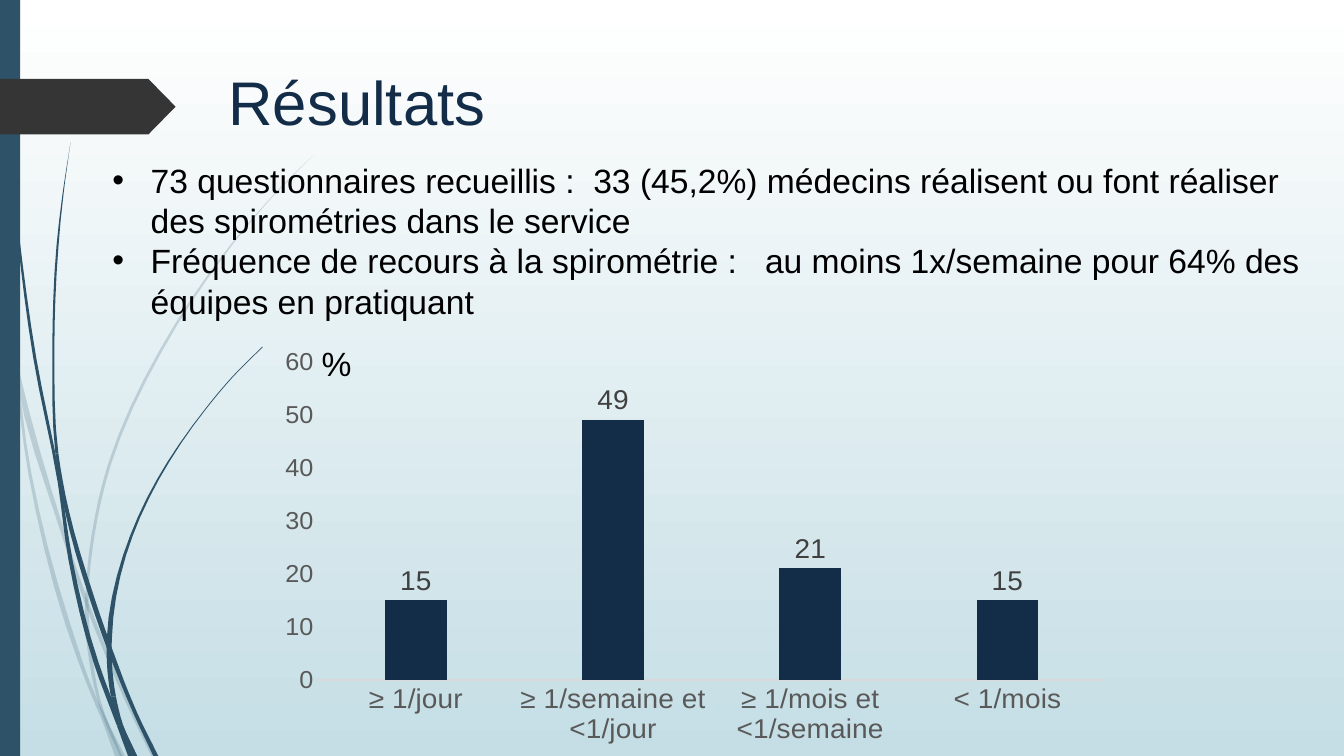
from lxml import etree
from pptx import Presentation
from pptx.chart.data import CategoryChartData
from pptx.dml.color import RGBColor
from pptx.enum.chart import XL_CHART_TYPE as ChartType
from pptx.enum.chart import XL_LABEL_POSITION as LabelPosition
from pptx.enum.chart import XL_TICK_MARK as TickMark
from pptx.enum.shapes import MSO_SHAPE as Preset
from pptx.enum.text import MSO_ANCHOR as Anchor
from pptx.enum.text import MSO_AUTO_SIZE as AutoSize
from pptx.enum.text import PP_ALIGN as Align
from pptx.oxml import parse_xml
from pptx.oxml.ns import nsdecls, qn
from pptx.util import Inches, Pt

WIDTH, HEIGHT = Inches(13.33), Inches(7.5)
COLUMNS, ROWS = 160, 90
FONT = "Arial"
NAVY, TEAL, CHARCOAL, BLACK = "132C48", "2E5369", "353535", "000000"
AXIS_GREY, LABEL_GREY, LINE_GREY = "595959", "404040", "D9D9D9"

FINDINGS = [
    "73 questionnaires recueillis :  33 (45,2%) médecins réalisent ou font réaliser "
    "des spirométries dans le service",
    "Fréquence de recours à la spirométrie :   au moins 1x/semaine pour 64% des "
    "équipes en pratiquant",
]
FREQUENCIES = {
    "≥ 1/jour": 15,
    "≥ 1/semaine et <1/jour": 49,
    "≥ 1/mois et <1/semaine": 21,
    "< 1/mois": 15,
}

# Each grass blade: its stations (height, left edge, right edge) in inches,
# and the heights of the joints between its sections.
PALE_BLADES = [
    ([(2.82, 0, 0), (2.99, 0, 0.04), (3.5, 0.11, 0.14), (4.69, 0.28, 0.31),
      (6.2, 0.65, 0.7), (6.93, 0.92, 0.96), (7.14, 1.01, 1.06), (7.5, 1.14, 1.21)],
     (3.5, 7.14)),
    ([(3.45, 0.14, 0.14), (3.76, 0.17, 0.21), (5.21, 0.58, 0.62), (5.98, 0.84, 0.88),
      (6.93, 1.23, 1.27), (7.5, 1.5, 1.55)],
     (5.98,)),
    ([(1.53, 3.12, 3.12), (1.75, 2.89, 2.9), (1.98, 2.67, 2.68), (2.45, 2.27, 2.29),
      (3.48, 1.58, 1.61), (4.61, 1.07, 1.1), (5.3, 0.91, 0.94), (5.86, 0.85, 0.88),
      (6.1, 0.84, 0.88), (6.46, 0.87, 0.91), (6.92, 0.96, 0.99), (7.11, 1.02, 1.05),
      (7.5, 1.19, 1.24)],
     (5.86, 6.1, 6.92, 7.11)),
]
DARK_BLADES = [
    ([(0, 0.03, 0.04), (1.1, 0.07, 0.08), (2.33, 0.17, 0.19), (3.55, 0.33, 0.36),
      (4.77, 0.57, 0.6), (5.56, 0.68, 0.72), (6.58, 0.93, 0.98), (7.2, 1.16, 1.22),
      (7.5, 1.27, 1.36)],
     (4.77, 7.2)),
    ([(1.41, 0.7, 0.7), (1.93, 0.62, 0.63), (2.45, 0.56, 0.58), (3.49, 0.52, 0.54),
      (4.5, 0.55, 0.58), (5.05, 0.64, 0.68), (5.91, 0.88, 0.93), (6.43, 1.06, 1.11),
      (7.07, 1.32, 1.36), (7.5, 1.52, 1.57)],
     (4.5, 5.05, 6.43)),
    ([(3.44, 2.6, 2.61), (3.74, 2.3, 2.31), (4.05, 2.04, 2.05), (4.75, 1.56, 1.58),
      (5.51, 1.22, 1.25), (6.33, 1.06, 1.11), (6.56, 1.06, 1.11), (6.91, 1.1, 1.15),
      (7.19, 1.17, 1.22), (7.5, 1.29, 1.36)],
     (6.33, 6.56, 6.91, 7.19)),
]


def rgb(hex_code):
    return RGBColor.from_string(hex_code)


def cell_box(column, row, columns, rows):
    """Turn grid cells into left, top, width and height."""
    return (int(WIDTH * column / COLUMNS), int(HEIGHT * row / ROWS),
            int(WIDTH * columns / COLUMNS), int(HEIGHT * rows / ROWS))


def style_font(font, size, color):
    font.name, font.size, font.color.rgb = FONT, Pt(size), rgb(color)


def paint(shape, color):
    shape.fill.solid()
    shape.fill.fore_color.rgb = rgb(color)
    shape.line.fill.background()
    shape.shadow.inherit = False


def paint_background(slide):
    fill = slide.background.fill
    fill.gradient()
    fill.gradient_angle = 270
    for stop, position, color in zip(fill.gradient_stops, (0, 1), ("FFFFFF", "C5DEE5")):
        stop.position, stop.color.rgb = position, rgb(color)


def smooth(heights, edge, steps=4):
    """Run a cubic curve through the edge's stations, as (x, y) points."""
    gaps = [b - a for a, b in zip(heights, heights[1:])]
    rates = [(b - a) / gap for a, b, gap in zip(edge, edge[1:], gaps)]
    inner = [(rates[i] * gaps[i + 1] + rates[i + 1] * gaps[i]) / (gaps[i] + gaps[i + 1])
             for i in range(len(gaps) - 1)]
    slopes = [rates[0], *inner, rates[-1]]
    curve = []
    for i, gap in enumerate(gaps):
        for t in (step / steps for step in range(steps)):
            ease = t * t * (3 - 2 * t)
            bend = gap * t * (1 - t) * (slopes[i] * (1 - t) - slopes[i + 1] * t)
            curve.append((edge[i] + (edge[i + 1] - edge[i]) * ease + bend,
                          heights[i] + gap * t))
    return curve + [(edge[-1], heights[-1])]


def add_blade(slide, stations, joints, opacity=100):
    heights, left, right = zip(*stations)
    sides = smooth(heights, left), smooth(heights, right)
    bounds = [heights[0], *joints, heights[-1]]
    for top, bottom in zip(bounds, bounds[1:]):
        down, up = ([(x * 1000, y * 1000) for x, y in side if top <= y <= bottom]
                    for side in sides)
        outline = down + up[::-1]
        builder = slide.shapes.build_freeform(*outline[0], scale=914.4)
        builder.add_line_segments(outline[1:], close=True)
        section = builder.convert_to_shape()
        paint(section, TEAL)
        if opacity < 100:
            color = section.element.spPr.find(f"{qn('a:solidFill')}/{qn('a:srgbClr')}")
            etree.SubElement(color, qn("a:alpha"), val=str(opacity * 1000))


def add_block(slide, preset, box, color):
    block = slide.shapes.add_shape(preset, *cell_box(*box))
    paint(block, color)
    return block


def add_title(slide, text, box):
    title = slide.shapes.title
    title.left, title.top, title.width, title.height = cell_box(*box)
    frame = title.text_frame
    frame.text = text
    frame.vertical_anchor, frame.auto_size = Anchor.TOP, AutoSize.NONE
    frame.paragraphs[0].alignment = Align.LEFT
    style_font(frame.paragraphs[0].runs[0].font, 44, NAVY)
    slide.shapes.element.append(title.element)  # in front of the blades


def add_text(slide, lines, box, bulleted=False):
    frame = slide.shapes.add_textbox(*cell_box(*box)).text_frame
    frame.word_wrap = True
    frame.text = "\n".join(lines)
    for paragraph in frame.paragraphs:
        style_font(paragraph.runs[0].font, 24, BLACK)
        if bulleted:
            add_bullet(paragraph)


def add_bullet(paragraph):
    properties = paragraph._p.get_or_add_pPr()
    hang = Inches(0.38)
    properties.set("marL", str(hang))
    properties.set("indent", str(-hang))
    etree.SubElement(properties, qn("a:buFont"), typeface=FONT)
    etree.SubElement(properties, qn("a:buChar"), char="•")


def style_axis(axis, size):
    axis.has_major_gridlines = False
    axis.major_tick_mark = axis.minor_tick_mark = TickMark.NONE
    style_font(axis.tick_labels.font, size, AXIS_GREY)


def set_plot_area(chart, *percents):
    """Fix the inner plot area: x, y, width, height in percent of the chart."""
    sizes = "".join(f'<c:{tag} val="{percent / 100}"/>'
                    for tag, percent in zip("xywh", percents))
    plot_area = chart.element.find(f".//{qn('c:plotArea')}")
    for layout in plot_area.findall(qn("c:layout")):
        plot_area.remove(layout)
    plot_area.insert(0, parse_xml(
        f'<c:layout {nsdecls("c")}><c:manualLayout><c:layoutTarget val="inner"/>'
        f'<c:xMode val="edge"/><c:yMode val="edge"/>{sizes}</c:manualLayout></c:layout>'))


def add_frequency_chart(slide, box):
    data = CategoryChartData()
    data.categories = list(FREQUENCIES)
    data.add_series("Series 1", list(FREQUENCIES.values()))
    chart = slide.shapes.add_chart(
        ChartType.COLUMN_CLUSTERED, *cell_box(*box), data).chart
    chart.has_legend = chart.has_title = False
    style_font(chart.font, 18, BLACK)
    set_plot_area(chart, 5.6, 6, 90.9, 80.6)

    style_axis(chart.category_axis, 20)
    axis_line = chart.category_axis.format.line
    axis_line.color.rgb, axis_line.width = rgb(LINE_GREY), Pt(0.75)
    percent_axis = chart.value_axis
    style_axis(percent_axis, 18)
    percent_axis.format.line.fill.background()
    percent_axis.minimum_scale, percent_axis.maximum_scale = 0, 60
    percent_axis.major_unit = 10

    plot = chart.plots[0]
    plot.vary_by_categories, plot.gap_width, plot.overlap = False, 219, -27
    bars = plot.series[0].format.fill
    bars.solid()
    bars.fore_color.rgb = rgb(NAVY)
    plot.has_data_labels = True
    plot.data_labels.show_value = True
    plot.data_labels.position = LabelPosition.OUTSIDE_END
    style_font(plot.data_labels.font, 20, LABEL_GREY)


def main():
    deck = Presentation()
    deck.slide_width, deck.slide_height = WIDTH, HEIGHT
    slide = deck.slides.add_slide(deck.slide_layouts[5])
    paint_background(slide)
    for stations, joints in PALE_BLADES:
        add_blade(slide, stations, joints, opacity=20)
    for stations, joints in DARK_BLADES:
        add_blade(slide, stations, joints)
    add_block(slide, Preset.RECTANGLE, (0, 0, 2.4, 90), TEAL)
    tag = add_block(slide, Preset.PENTAGON, (0, 9.4, 20.9, 6.6), CHARCOAL)
    tag.adjustments[0] = 0.49
    add_title(slide, "Résultats", (26, 7, 89.8, 17.4))
    add_text(slide, FINDINGS, (12.2, 18.4, 144.8, 25.4), bulleted=True)
    add_frequency_chart(slide, (32, 40.2, 103.3, 48.5))
    add_text(slide, ["%"], (37.1, 40.2, 9.7, 6))
    deck.save("out.pptx")


if __name__ == "__main__":
    main()
